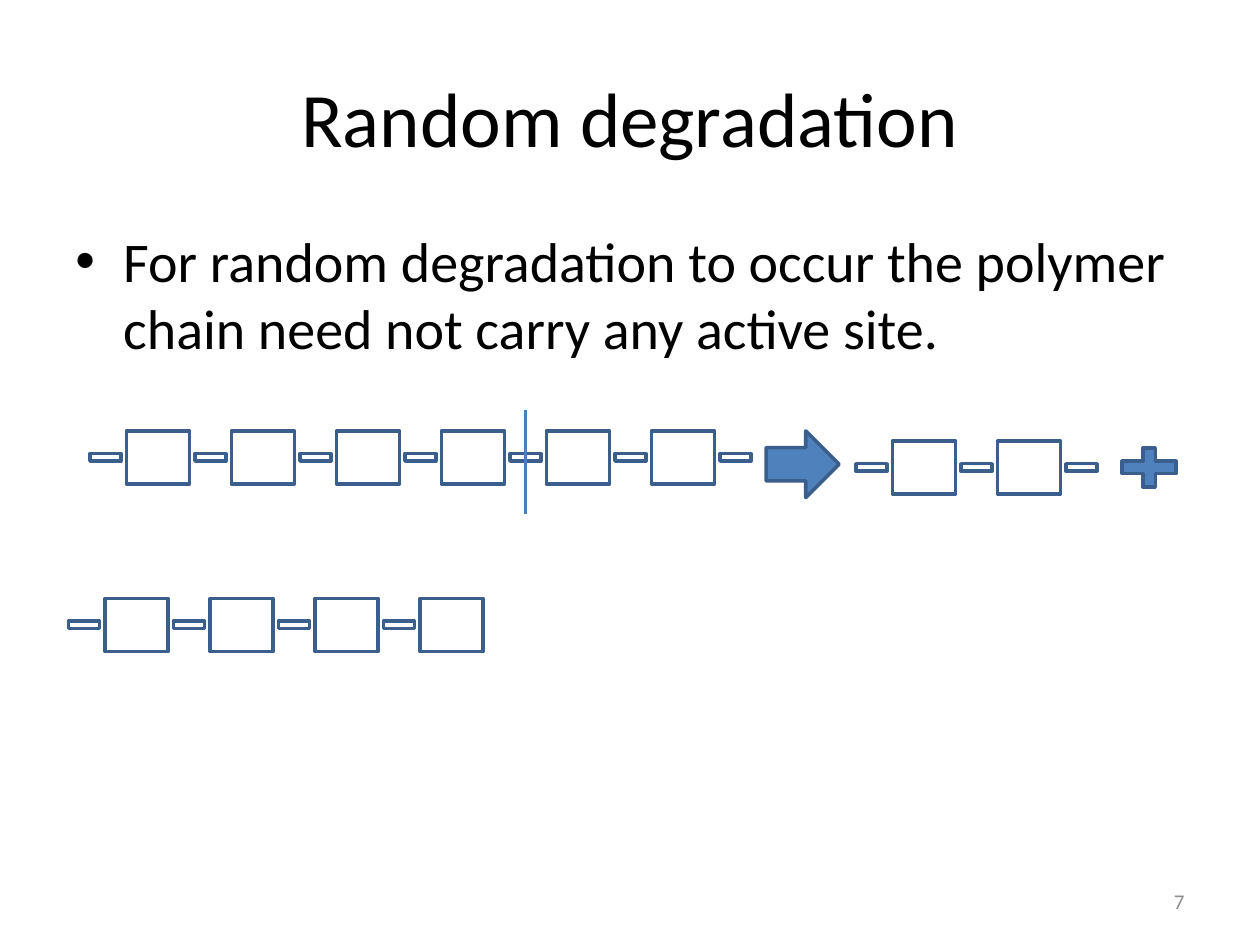
from dataclasses import dataclass

from lxml import etree
from pptx import Presentation
from pptx.dml.color import RGBColor
from pptx.enum.shapes import MSO_CONNECTOR, MSO_SHAPE
from pptx.enum.text import MSO_ANCHOR, PP_ALIGN
from pptx.oxml.ns import qn
from pptx.shapes.autoshape import Shape
from pptx.slide import Slide
from pptx.text.text import TextFrame
from pptx.util import Inches, Pt

UNIT = MSO_SHAPE.FLOWCHART_PROCESS
BOND = MSO_SHAPE.MATH_MINUS
ARROW = MSO_SHAPE.RIGHT_ARROW
PLUS = MSO_SHAPE.MATH_PLUS
STRAIGHT = MSO_CONNECTOR.STRAIGHT
LEFT, CENTER, RIGHT = PP_ALIGN.LEFT, PP_ALIGN.CENTER, PP_ALIGN.RIGHT
TOP, MIDDLE = MSO_ANCHOR.TOP, MSO_ANCHOR.MIDDLE

UNIT_WIDTH, UNIT_HEIGHT = 0.5, 0.42
BOND_WIDTH, BOND_HEIGHT = 1 / 3, 0.25
PITCH = UNIT_WIDTH + BOND_WIDTH
TITLE_ONLY_LAYOUT = 5


@dataclass(frozen=True)
class Theme:
    font: str = "Calibri"
    text: RGBColor = RGBColor(0x00, 0x00, 0x00)
    muted: RGBColor = RGBColor(0x8C, 0x8C, 0x8C)
    fill: RGBColor = RGBColor(0x4F, 0x81, 0xBD)
    outline: RGBColor = RGBColor(0x3A, 0x5F, 0x8C)
    cut: RGBColor = RGBColor(0x4B, 0x7E, 0xBC)
    line_width: float = 2
    title_size: float = 44
    body_size: float = 32
    number_size: float = 12


THEME = Theme()


@dataclass(frozen=True)
class Box:
    left: float
    top: float
    width: float
    height: float

    def lengths(self) -> tuple[int, ...]:
        return tuple(Inches(v) for v in (self.left, self.top, self.width, self.height))


@dataclass(frozen=True)
class Chain:
    left: float
    top: float
    units: int
    closing_bond: bool = True


CHAINS = (
    Chain(left=0.67, top=3.42, units=6),
    Chain(left=6.75, top=3.5, units=2),
    Chain(left=0.5, top=4.75, units=4, closing_bond=False),
)


def write_text(frame: TextFrame, text: str, *, size: float,
               color: RGBColor = THEME.text, align: PP_ALIGN = LEFT,
               anchor: MSO_ANCHOR = TOP, bullet: bool = False) -> None:
    frame.word_wrap = True
    frame.vertical_anchor = anchor
    paragraph = frame.paragraphs[0]
    paragraph.alignment = align
    run = paragraph.add_run()
    run.text = text
    run.font.name = THEME.font
    run.font.size = Pt(size)
    run.font.color.rgb = color
    if bullet:
        paragraph.space_before = Pt(size * 0.2)
        properties = paragraph._p.get_or_add_pPr()
        properties.set("marL", str(Inches(0.38)))
        properties.set("indent", str(Inches(-0.38)))
        etree.SubElement(properties, qn("a:buFont")).set("typeface", "Arial")
        etree.SubElement(properties, qn("a:buChar")).set("char", "•")


def draw_shape(slide: Slide, kind: MSO_SHAPE, box: Box,
               fill: RGBColor | None = None) -> Shape:
    shape = slide.shapes.add_shape(kind, *box.lengths())
    shape.shadow.inherit = False
    if fill is None:
        shape.fill.background()
    else:
        shape.fill.solid()
        shape.fill.fore_color.rgb = fill
    shape.line.color.rgb = THEME.outline
    shape.line.width = Pt(THEME.line_width)
    return shape


def draw_chain(slide: Slide, chain: Chain) -> None:
    bond_top = chain.top + (UNIT_HEIGHT - BOND_HEIGHT) / 2
    for index in range(chain.units + chain.closing_bond):
        bond_left = chain.left + index * PITCH
        draw_shape(slide, BOND, Box(bond_left, bond_top, BOND_WIDTH, BOND_HEIGHT))
        if index < chain.units:
            unit_left = bond_left + BOND_WIDTH
            draw_shape(slide, UNIT, Box(unit_left, chain.top, UNIT_WIDTH, UNIT_HEIGHT))


def draw_cut(slide: Slide, x: float, top: float, bottom: float) -> None:
    cut = slide.shapes.add_connector(
        STRAIGHT, Inches(x), Inches(top), Inches(x), Inches(bottom))
    cut.line.color.rgb = THEME.cut
    cut.line.width = Pt(THEME.line_width)
    etree.SubElement(cut._element.spPr, qn("a:effectLst"))


def main() -> None:
    presentation = Presentation()
    presentation.slide_width = Inches(10)
    presentation.slide_height = Inches(7.5)
    slide = presentation.slides.add_slide(presentation.slide_layouts[TITLE_ONLY_LAYOUT])

    title = slide.shapes.title
    title.left, title.top, title.width, title.height = Box(0.5, 0.3, 9, 1.25).lengths()
    write_text(title.text_frame, "Random degradation",
               size=THEME.title_size, align=CENTER, anchor=MIDDLE)

    statement = slide.shapes.add_textbox(*Box(0.5, 1.75, 9, 4.95).lengths())
    write_text(statement.text_frame,
               "For random degradation to occur the polymer chain need not carry any active site.",
               size=THEME.body_size, bullet=True)

    for chain in CHAINS:
        draw_chain(slide, chain)
    draw_cut(slide, x=4.17, top=3.25, bottom=4.08)
    draw_shape(slide, ARROW, Box(6.08, 3.42, 0.58, 0.53), fill=THEME.fill)
    draw_shape(slide, PLUS, Box(8.83, 3.5, 0.58, 0.42), fill=THEME.fill)

    slide_number = slide.shapes.add_textbox(*Box(7.17, 6.95, 2.33, 0.4).lengths())
    write_text(slide_number.text_frame, "7", size=THEME.number_size,
               color=THEME.muted, align=RIGHT, anchor=MIDDLE)

    presentation.save("out.pptx")


if __name__ == "__main__":
    main()
